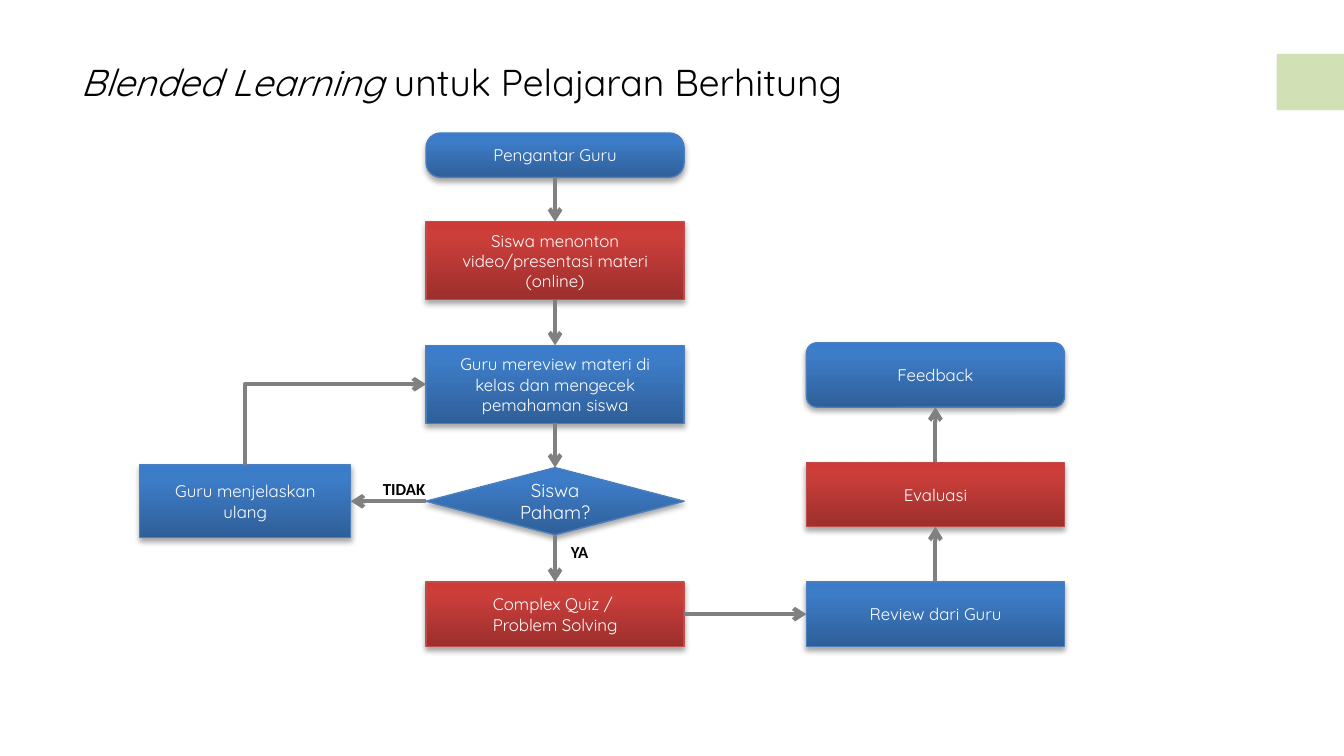
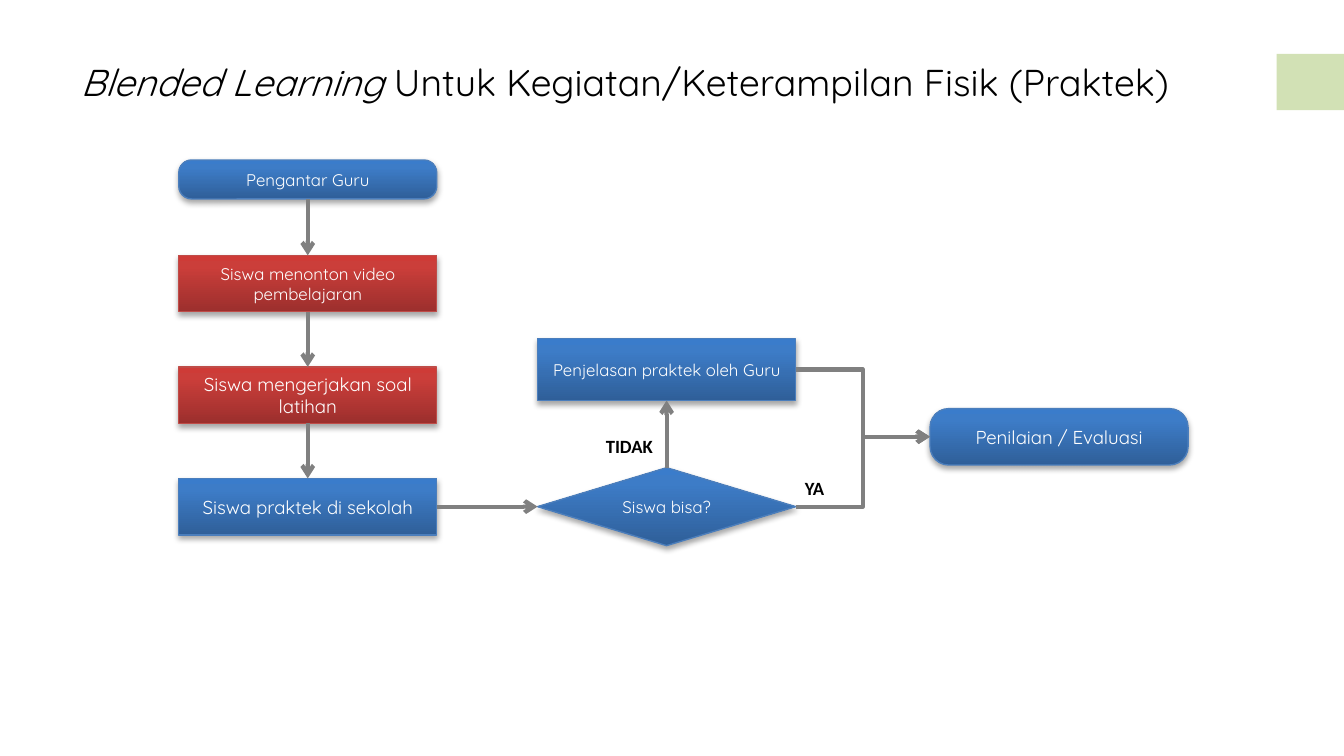
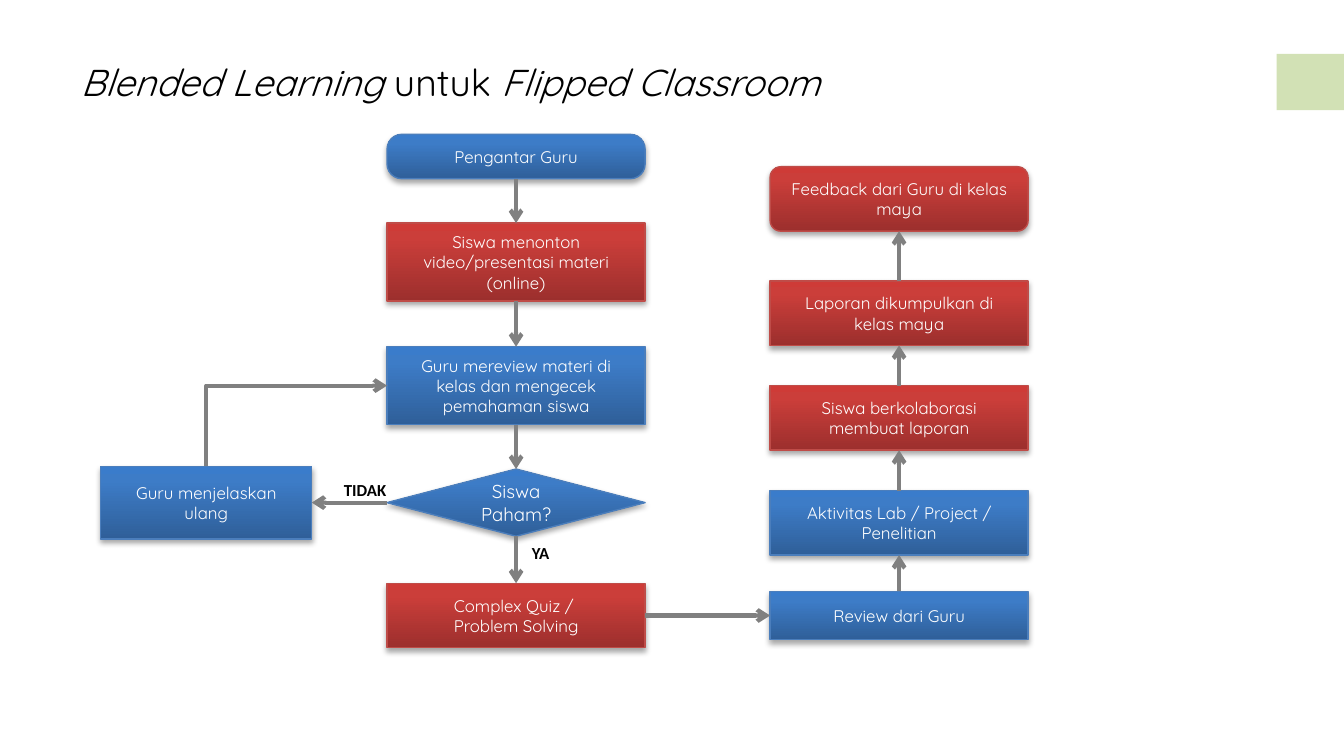
from itertools import pairwise

from lxml.etree import SubElement
from pptx import Presentation
from pptx.dml.color import RGBColor
from pptx.enum.shapes import MSO_CONNECTOR as CONN, MSO_SHAPE as SHAPE
from pptx.enum.text import MSO_ANCHOR as ANCHOR, MSO_AUTO_SIZE as AUTO, PP_ALIGN as ALIGN
from pptx.oxml.ns import qn
from pptx.util import Inches, Pt

COLORS = {"accent": "D2E1B5", "arrow": "808080", "black": "000000", "white": "FFFFFF"}
RGB = {name: RGBColor.from_string(value) for name, value in COLORS.items()}
# Gradient stops from bottom to top, and the outline
BOX_STYLES = {
    "blue": {"stops": [(0, "2F5F99"), (80, "3D7CC7"), (100, "3A7CCB")], "line": "4B7EBC"},
    "red": {"stops": [(0, "9C2F2D"), (80, "CB3E3A"), (100, "CE3B37")], "line": "BF4C48"},
}
FONT, LABEL_FONT = "Quicksand", "Calibri"
RECT, ROUND, DIAMOND = SHAPE.RECTANGLE, SHAPE.ROUNDED_RECTANGLE, SHAPE.DIAMOND
TOP, LEFT, BOTTOM, RIGHT = range(4)  # connection sites
BOX_W = 1.92
ROUNDNESS = 0.33


def add_box(s, kind, style, x, y, h, text, w=BOX_W, size=9, roundness=None):
    """Add a flowchart step; each line of text becomes a paragraph."""
    sp = s.shapes.add_shape(kind, Inches(x), Inches(y), Inches(w), Inches(h))
    if roundness:
        sp.adjustments[0] = roundness
    sp.fill.gradient()
    sp.fill.gradient_angle = 90
    stops = sp.element.spPr.find(".//" + qn("a:gsLst"))
    for old in list(stops):
        stops.remove(old)
    for pos, color in BOX_STYLES[style]["stops"]:
        stop = SubElement(stops, qn("a:gs"), pos=str(pos * 1000))
        SubElement(stop, qn("a:srgbClr"), val=color)
    sp.line.color.rgb = RGBColor.from_string(BOX_STYLES[style]["line"])
    sp.line.width = Pt(0.75)
    sp.shadow.inherit = False
    effects = sp.element.spPr.find(qn("a:effectLst"))
    shadow = SubElement(effects, qn("a:outerShdw"), blurRad=str(Pt(3.1)), dist=str(Pt(1.8)),
                        dir="5400000", rotWithShape="0")
    shade = SubElement(shadow, qn("a:srgbClr"), val=COLORS["black"])
    SubElement(shade, qn("a:alpha"), val="35000")

    tf = sp.text_frame
    tf.word_wrap = True
    tf.vertical_anchor = ANCHOR.MIDDLE
    for i, line in enumerate(text.split("\n")):
        p = tf.add_paragraph() if i else tf.paragraphs[0]
        p.alignment = ALIGN.CENTER
        r = p.add_run()
        r.text = line
        r.font.name, r.font.size = FONT, Pt(size)
        r.font.color.rgb = RGB["white"]
    return sp


def add_arrow(s, start, start_side, end, end_side, kind=CONN.STRAIGHT):
    cn = s.shapes.add_connector(kind, 0, 0, 0, 0)
    cn.begin_connect(start, start_side)
    cn.end_connect(end, end_side)
    cn.line.color.rgb = RGB["arrow"]
    cn.line.width = Pt(2.25)
    sp_pr = cn.element.spPr
    SubElement(sp_pr.find(qn("a:ln")), qn("a:tailEnd"), type="arrow")
    SubElement(sp_pr, qn("a:effectLst"))
    return cn


prs = Presentation()
prs.slide_width = Inches(10)
prs.slide_height = prs.slide_width * 9 // 16

# Titles as (text, italic) runs, with the title width
titles = [
    (8.42, [("Blended Learning ", True), ("untuk Pelajaran Berhitung", False)]),
    (9, [("Blended Learning ", True), ("Untuk Kegiatan/Keterampilan Fisik (Praktek)", False)]),
    (7.75, [("Blended Learning ", True), ("untuk ", False), ("Flipped Classroom", True)]),
]
for title_w, runs in titles:
    s = prs.slides.add_slide(prs.slide_layouts[5])
    band = s.shapes.add_shape(RECT, Inches(9.5), Inches(0.4), Inches(0.5), Inches(0.42))
    band.fill.solid()
    band.fill.fore_color.rgb = RGB["accent"]
    band.line.fill.background()
    band.shadow.inherit = False

    title = s.shapes.title
    title.left, title.top = Inches(0.5), Inches(0.39)
    title.width, title.height = Inches(title_w), Inches(0.44)
    tf = title.text_frame
    tf.word_wrap = True
    tf.auto_size = AUTO.SHAPE_TO_FIT_TEXT
    tf.vertical_anchor = ANCHOR.TOP
    p = tf.paragraphs[0]
    p.alignment = ALIGN.LEFT
    p.space_after = Pt(12)
    for text, italic in runs:
        r = p.add_run()
        r.text = text
        r.font.name, r.font.size, r.font.italic = FONT, Pt(20), italic
        r.font.color.rgb = RGB["black"]

counting, practice, flipped = prs.slides
labels = []  # slide, x, y, width, height, text, size

# Origin of the lesson flow shared by the counting and flipped slides, then the
# follow-up column: (shape, style, top, height, text) from the bottom up
follow_ups = [
    (counting, 3.17, 0.99, 6, [
        (RECT, "blue", 4.33, 0.48, "Review dari Guru"),
        (RECT, "red", 3.44, 0.48, "Evaluasi"),
        (ROUND, "blue", 2.55, 0.48, "Feedback"),
    ]),
    (flipped, 2.88, 1, 5.73, [
        (RECT, "blue", 4.4, 0.36, "Review dari Guru"),
        (RECT, "blue", 3.65, 0.48, "Aktivitas Lab / Project / Penelitian"),
        (RECT, "red", 2.87, 0.48, "Siswa berkolaborasi membuat laporan"),
        (RECT, "red", 2.09, 0.48, "Laporan dikumpulkan di kelas maya"),
        (ROUND, "red", 1.24, 0.48, "Feedback dari Guru di kelas maya"),
    ]),
]
for s, x, y, follow_x, steps in follow_ups:
    intro = add_box(s, ROUND, "blue", x, y, 0.33, "Pengantar Guru", roundness=ROUNDNESS)
    video = add_box(s, RECT, "red", x, y + 0.66, 0.58,
                    "Siswa menonton video/presentasi materi (online)")
    review = add_box(s, RECT, "blue", x, y + 1.58, 0.58,
                     "Guru mereview materi di kelas dan mengecek pemahaman siswa")
    check = add_box(s, DIAMOND, "blue", x, y + 2.49, 0.5, "Siswa Paham?", size=10)
    quiz = add_box(s, RECT, "red", x, y + 3.34, 0.48, "Complex Quiz / \nProblem Solving")
    explain = add_box(s, RECT, "blue", x - 2.13, y + 2.47, 0.54, "Guru menjelaskan ulang", w=1.57)
    for upper, lower in pairwise([intro, video, review, check, quiz]):
        add_arrow(s, upper, BOTTOM, lower, TOP)
    add_arrow(s, check, LEFT, explain, RIGHT)

    # One-corner elbow: up from the explanation, then right into the review
    back = add_arrow(s, explain, TOP, review, LEFT, CONN.ELBOW)
    run, rise = back.width, back.height
    mid_x, mid_y = back.left + run // 2, back.top + rise // 2
    back.left, back.top = mid_x - rise // 2, mid_y - run // 2
    back.width, back.height = rise, run
    sp_pr = back.element.spPr
    sp_pr.find(qn("a:prstGeom")).set("prst", "bentConnector2")
    xfrm = sp_pr.find(qn("a:xfrm"))
    for name, value in (("rot", "5400000"), ("flipH", "1"), ("flipV", "1")):
        xfrm.set(name, value)

    column = [add_box(s, kind, style, follow_x, top, h, text)
              for kind, style, top, h, text in steps]
    add_arrow(s, quiz, RIGHT, column[0], LEFT)
    for lower, upper in pairwise(column):
        add_arrow(s, lower, TOP, upper, BOTTOM)
    labels += [(s, x - 0.42, y + 2.52, 0.52, 0.25, "TIDAK", 9),
               (s, x + 0.98, y + 2.99, 0.34, 0.25, "YA", 9)]

# Practice flow
s = practice
steps = [
    add_box(s, ROUND, "blue", 1.33, 1.19, 0.29, "Pengantar Guru", roundness=ROUNDNESS),
    add_box(s, RECT, "red", 1.33, 1.9, 0.42, "Siswa menonton video pembelajaran"),
    add_box(s, RECT, "red", 1.33, 2.73, 0.42, "Siswa mengerjakan soal latihan", size=10),
    add_box(s, RECT, "blue", 1.33, 3.56, 0.42, "Siswa praktek di sekolah", size=10),
]
for upper, lower in pairwise(steps):
    add_arrow(s, upper, BOTTOM, lower, TOP)
check = add_box(s, DIAMOND, "blue", 4, 3.48, 0.58, "Siswa bisa?")
explain = add_box(s, RECT, "blue", 4, 2.52, 0.46, "Penjelasan praktek oleh Guru")
grading = add_box(s, ROUND, "blue", 6.92, 3.04, 0.42, "Penilaian / Evaluasi",
                  size=10, roundness=ROUNDNESS)
add_arrow(s, steps[-1], RIGHT, check, LEFT)
add_arrow(s, check, TOP, explain, BOTTOM)
for source in (explain, check):
    add_arrow(s, source, RIGHT, grading, LEFT, CONN.ELBOW)
labels += [(s, 4.41, 3.19, 0.56, 0.27, "TIDAK", 10), (s, 5.89, 3.5, 0.36, 0.27, "YA", 10)]

for s, x, y, w, h, text, size in labels:
    tf = s.shapes.add_textbox(Inches(x), Inches(y), Inches(w), Inches(h)).text_frame
    tf.word_wrap = False
    tf.auto_size = AUTO.SHAPE_TO_FIT_TEXT
    r = tf.paragraphs[0].add_run()
    r.text = text
    r.font.name, r.font.size, r.font.bold = LABEL_FONT, Pt(size), True
    r.font.color.rgb = RGB["black"]

prs.save("out.pptx")
